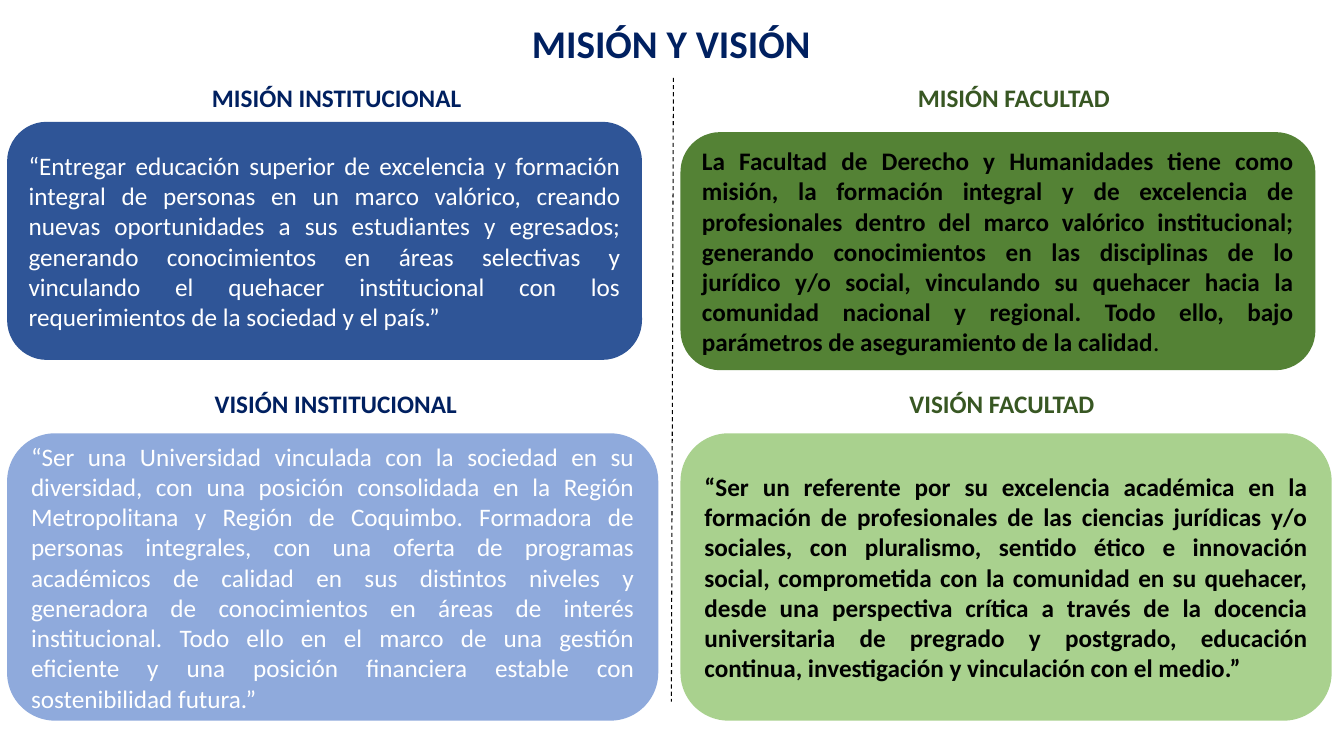
"""Builds the slide with the mission and vision of the institution and the faculty."""
from lxml import etree
from pptx import Presentation
from pptx import util as u
from pptx.dml.color import RGBColor
from pptx.enum import dml, shapes, text
from pptx.oxml.ns import qn

COLORS = {
    "navy": "002060", "blue": "2F5597", "light blue": "8FAADC",
    "forest": "385723", "green": "548235", "light green": "A9D18E",
    "white": "FFFFFF", "black": "000000",
}
FONT = "Calibri"
TITLE = "MISIÓN Y VISIÓN"
TITLE_AREA = (7.24, 0.36, 19.35, 1.5)
DIVIDER = (16.97, 1.96, 16.92, 17.68)

HEADING_TOPS = {"misión": 1.96, "visión": 9.65}
HEADING_HEIGHT = 1.02
CARD_SIZES = {"misión": (16, 6), "visión": (16.41, 7.24)}
CARD_LEFTS = {"institucional": 0.18, "facultad": 17.15}
HEADING_COLORS = {"institucional": "navy", "facultad": "forest"}
CARD_TEXT = {"institucional": ("white", False), "facultad": ("black", True)}

SECTIONS = [
    {"row": "misión", "column": "institucional", "heading": "MISIÓN INSTITUCIONAL",
     "heading_span": (0, 16.97), "card_top": 3.07, "fill": "blue", "closing": "",
     "body": "“Entregar educación superior de excelencia y formación integral de personas "
             "en un marco valórico, creando nuevas oportunidades a sus estudiantes y "
             "egresados; generando conocimientos en áreas selectivas y vinculando el "
             "quehacer institucional con los requerimientos de la sociedad y el país.”"},
    {"row": "visión", "column": "institucional", "heading": "VISIÓN INSTITUCIONAL ",
     "heading_span": (0.1, 16.87), "card_top": 10.92, "fill": "light blue", "closing": "",
     "body": "“Ser una Universidad vinculada con la sociedad en su diversidad, con una "
             "posición consolidada en la Región Metropolitana y Región de Coquimbo. "
             "Formadora de personas integrales, con una oferta de programas académicos de "
             "calidad en sus distintos niveles y generadora de conocimientos en áreas de "
             "interés institucional. Todo ello en el marco de una gestión eficiente y una "
             "posición financiera estable con sostenibilidad futura.”"},
    {"row": "misión", "column": "facultad", "heading": "MISIÓN FACULTAD",
     "heading_span": (17.09, 16.92), "card_top": 3.33, "fill": "green", "closing": ".",
     "body": "La Facultad de Derecho y Humanidades tiene como misión, la formación integral "
             "y de excelencia de profesionales dentro del marco valórico institucional; "
             "generando conocimientos en las disciplinas de lo jurídico y/o social, "
             "vinculando su quehacer hacia la comunidad nacional y regional. Todo ello, "
             "bajo parámetros de aseguramiento de la calidad"},
    {"row": "visión", "column": "facultad", "heading": "VISIÓN FACULTAD",
     "heading_span": (16.92, 16.66), "card_top": 10.92, "fill": "light green", "closing": "",
     "body": "“Ser un referente por su excelencia académica en la formación de profesionales "
             "de las ciencias jurídicas y/o sociales, con pluralismo, sentido ético e "
             "innovación social, comprometida con la comunidad en su quehacer, desde una "
             "perspectiva crítica a través de la docencia universitaria de pregrado y "
             "postgrado, educación continua, investigación y vinculación con el medio.”"},
]


def color(name):
    return RGBColor.from_string(COLORS[name])


def cm(*lengths):
    return [u.Cm(length) for length in lengths]


def write(box, runs, ink, size=18, align=text.PP_ALIGN.CENTER, anchor=text.MSO_ANCHOR.TOP):
    frame = box.text_frame
    frame.word_wrap = True
    frame.auto_size = text.MSO_AUTO_SIZE.NONE
    frame.vertical_anchor = anchor
    paragraph = frame.paragraphs[0]
    paragraph.alignment = align
    for wording, bold in runs:
        run = paragraph.add_run()
        run.text = wording
        run.font.name = FONT
        run.font.size = u.Pt(size)
        run.font.bold = bold
        run.font.color.rgb = color(ink)


def add_title(slide):
    title = slide.shapes.title
    title.left, title.top, title.width, title.height = cm(*TITLE_AREA)
    title.fill.solid()
    title.fill.fore_color.rgb = color("white")
    write(title, [(TITLE, True)], "navy", size=28)


def add_section(slide, section):
    row, column = section["row"], section["column"]
    left, width = section["heading_span"]
    heading = slide.shapes.add_textbox(*cm(left, HEADING_TOPS[row], width, HEADING_HEIGHT))
    write(heading, [(section["heading"], True)], HEADING_COLORS[column])

    card = slide.shapes.add_shape(
        shapes.MSO_SHAPE.ROUNDED_RECTANGLE,
        *cm(CARD_LEFTS[column], section["card_top"], *CARD_SIZES[row]))
    card.shadow.inherit = False
    card.fill.solid()
    card.fill.fore_color.rgb = color(section["fill"])
    card.line.fill.background()
    ink, bold = CARD_TEXT[column]
    runs = [(section["body"], bold)]
    if section["closing"]:
        runs.append((section["closing"], False))
    write(card, runs, ink, align=text.PP_ALIGN.JUSTIFY, anchor=text.MSO_ANCHOR.MIDDLE)


def add_divider(slide):
    divider = slide.shapes.add_connector(shapes.MSO_CONNECTOR.STRAIGHT, *cm(*DIVIDER))
    divider.line.color.rgb = color("black")
    divider.line.width = u.Pt(0.75)
    divider.line.dash_style = dml.MSO_LINE.DASH
    etree.SubElement(divider._element.spPr, qn("a:effectLst"))


def main():
    deck = Presentation()
    deck.slide_width, deck.slide_height = cm(33.87, 19.05)
    slide = deck.slides.add_slide(deck.slide_layouts[5])
    add_title(slide)
    for section in SECTIONS:
        add_section(slide, section)
    add_divider(slide)
    deck.save("out.pptx")


if __name__ == "__main__":
    main()
